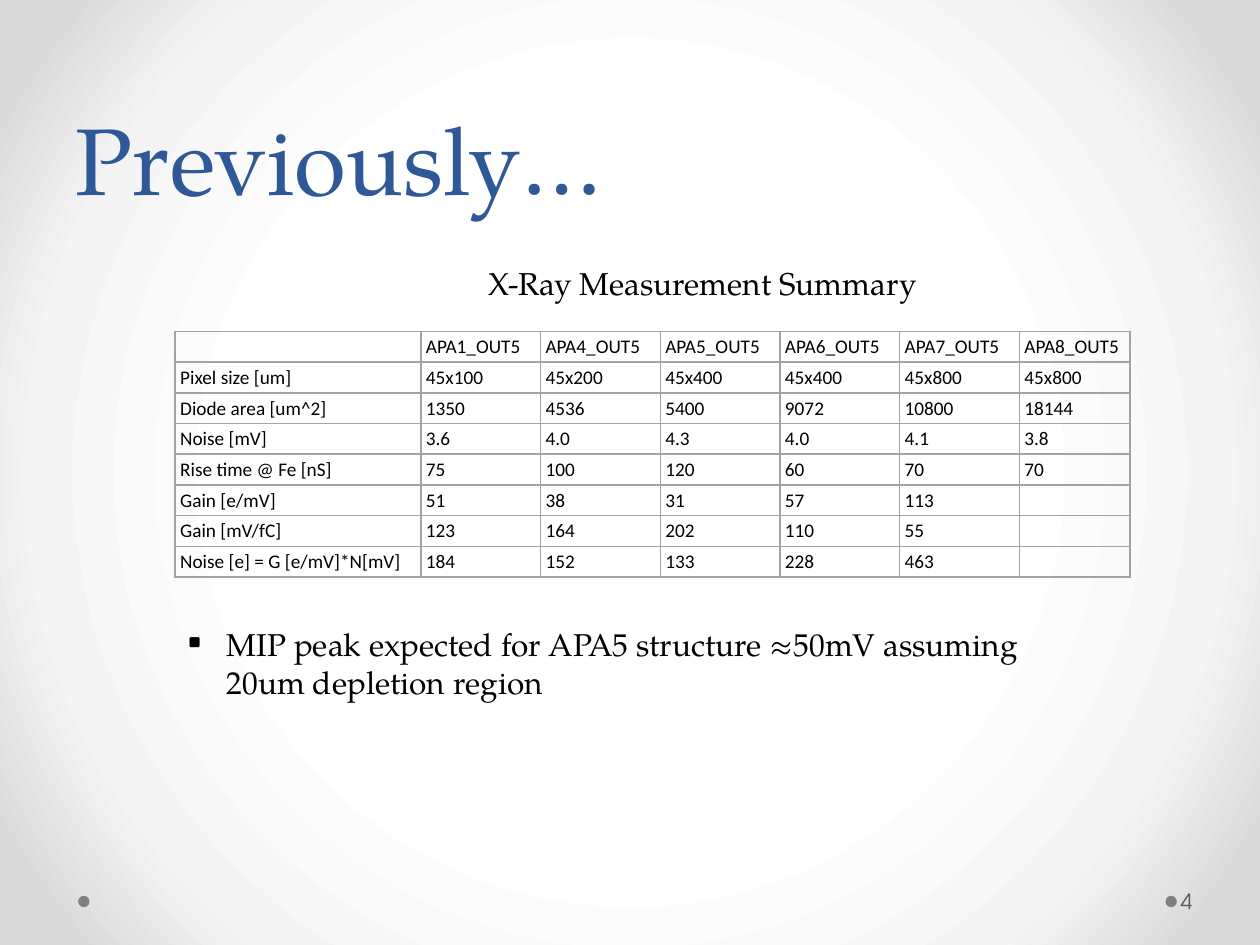
"""Build the X-ray measurement summary slide."""
from dataclasses import dataclass
from typing import Optional

from lxml.etree import SubElement
from pptx import Presentation
from pptx.dml.color import RGBColor
from pptx.enum.shapes import MSO_SHAPE
from pptx.enum.text import MSO_ANCHOR, MSO_AUTO_SIZE, PP_ALIGN
from pptx.oxml import parse_xml
from pptx.oxml.ns import nsdecls, qn
from pptx.util import Inches, Pt


@dataclass(frozen=True)
class Theme:
    """Colours, fonts and type sizes of the slide."""

    title: str = "2F5897"
    text: str = "000000"
    number: str = "595959"
    dot: str = "808080"
    border: str = "A3A3A3"
    background: tuple = ((50, "FFFFFF"), (76, "F4F4F4"), (92, "DADADA"))
    serif: str = "TeX Gyre Pagella"
    sans: str = "TeX Gyre Adventor"
    table_font: str = "Calibri"
    title_size: int = 54
    body_size: int = 18
    number_size: int = 12
    table_size: int = 11


@dataclass(frozen=True)
class Box:
    """A rectangle measured in inches."""

    left: float
    top: float
    width: float
    height: float

    def lengths(self) -> tuple:
        """Return the four measures as lengths."""
        return tuple(Inches(v) for v in (self.left, self.top, self.width, self.height))


THEME = Theme()
DOTS = [Box(left, 7.11, 0.09, 0.09) for left in (9.25, 0.62)]
TABLE_BOX = Box(1.39, 2.63, 7.58, 1.92)
COLUMN_WIDTHS = [1.95] + [0.95] * 5 + [0.88]
MEASUREMENTS = [
    ["", "APA1_OUT5", "APA4_OUT5", "APA5_OUT5", "APA6_OUT5", "APA7_OUT5", "APA8_OUT5"],
    ["Pixel size [um]", "45x100", "45x200", "45x400", "45x400", "45x800", "45x800"],
    ["Diode area [um^2]", "1350", "4536", "5400", "9072", "10800", "18144"],
    ["Noise [mV]", "3.6", "4.0", "4.3", "4.0", "4.1", "3.8"],
    ["Rise time @ Fe [nS]", "75", "100", "120", "60", "70", "70"],
    ["Gain [e/mV]", "51", "38", "31", "57", "113", ""],
    ["Gain [mV/fC]", "123", "164", "202", "110", "55", ""],
    ["Noise [e] = G [e/mV]*N[mV]", "184", "152", "133", "228", "463", ""],
]


def write_text(text_frame, text: str, *, size: int, font: str, color: str = THEME.text,
               anchor=MSO_ANCHOR.TOP, wrap: bool = True, auto_size=MSO_AUTO_SIZE.NONE,
               line_spacing: Optional[int] = None, bullet: Optional[str] = None) -> None:
    """Write one left-aligned paragraph with the given format."""
    text_frame.word_wrap = wrap
    text_frame.auto_size = auto_size
    text_frame.vertical_anchor = anchor
    paragraph = text_frame.paragraphs[0]
    paragraph.alignment = PP_ALIGN.LEFT
    paragraph.space_before = Pt(0)
    if line_spacing:
        paragraph.line_spacing = Pt(line_spacing)
    if bullet:
        properties = paragraph._p.get_or_add_pPr()
        properties.set("marL", str(Inches(0.31)))
        properties.set("indent", str(-Inches(0.31)))
        SubElement(properties, qn("a:buFont"), typeface=font)
        SubElement(properties, qn("a:buChar"), char=bullet)
    run = paragraph.add_run()
    run.text = text
    run.font.size = Pt(size)
    run.font.name = font
    run.font.color.rgb = RGBColor.from_string(color)


def paint_background(slide) -> None:
    """Give the slide a circular gradient."""
    stops = "".join(f'<a:gs pos="{position * 1000}"><a:srgbClr val="{color}"/></a:gs>'
                    for position, color in THEME.background)
    background = parse_xml(
        f'<p:bg {nsdecls("p", "a")}><p:bgPr><a:gradFill rotWithShape="1">'
        f'<a:gsLst>{stops}</a:gsLst><a:path path="circle">'
        '<a:fillToRect l="50000" t="50000" r="50000" b="50000"/></a:path>'
        '</a:gradFill><a:effectLst/></p:bgPr></p:bg>')
    slide.element.cSld.insert(0, background)


def add_dot(slide, box: Box) -> None:
    """Draw one footer dot."""
    dot = slide.shapes.add_shape(MSO_SHAPE.OVAL, *box.lengths())
    dot.shadow.inherit = False
    dot.fill.solid()
    dot.fill.fore_color.rgb = RGBColor.from_string(THEME.dot)
    dot.line.fill.background()


def place(shape, box: Box) -> None:
    """Move and size a placeholder."""
    shape.left, shape.top, shape.width, shape.height = box.lengths()


def format_cell(cell, text: str) -> None:
    """Set the text, margins, fill and borders of a table cell."""
    cell.margin_left = cell.margin_right = Inches(0.04)
    cell.margin_top = cell.margin_bottom = Inches(0.03)
    if text:
        write_text(cell.text_frame, text, size=THEME.table_size, font=THEME.table_font)
    else:
        SubElement(cell.text_frame.paragraphs[0]._p, qn("a:endParaRPr"),
                   sz=str(THEME.table_size * 100))
    cell.fill.background()
    properties = cell._tc.get_or_add_tcPr()
    for index, side in enumerate(("lnL", "lnR", "lnT", "lnB")):
        properties.insert(index, parse_xml(
            f'<a:{side} {nsdecls("a")} w="{Pt(1)}"><a:solidFill>'
            f'<a:srgbClr val="{THEME.border}"/></a:solidFill></a:{side}>'))


def add_measurements(slide) -> None:
    """Add the table of measurements."""
    frame = slide.shapes.add_table(len(MEASUREMENTS), len(COLUMN_WIDTHS), *TABLE_BOX.lengths())
    table = frame.table
    table.first_row = table.horz_banding = False
    for column, width in zip(table.columns, COLUMN_WIDTHS):
        column.width = Inches(width)
    for row, values in zip(table.rows, MEASUREMENTS):
        for cell, value in zip(row.cells, values):
            format_cell(cell, value)


def main() -> None:
    """Build and save the presentation."""
    presentation = Presentation()
    presentation.slide_width, presentation.slide_height = Inches(10), Inches(7.5)
    slide = presentation.slides.add_slide(presentation.slide_layouts[1])
    paint_background(slide)
    for box in DOTS:
        add_dot(slide, box)

    title = slide.shapes.title
    place(title, Box(0.5, 0, 9, 1.75))
    write_text(title.text_frame, "Previously…", size=THEME.title_size, font=THEME.serif,
               color=THEME.title, anchor=MSO_ANCHOR.BOTTOM, line_spacing=58)

    number = slide.shapes.add_textbox(*Box(9.34, 6.95, 0.61, 0.4).lengths())
    number.text_frame.margin_left = Inches(0.03)
    number.text_frame.margin_right = Inches(0.05)
    write_text(number.text_frame, "4", size=THEME.number_size, font=THEME.sans,
               color=THEME.number, anchor=MSO_ANCHOR.MIDDLE)

    add_measurements(slide)

    caption = slide.shapes.add_textbox(*Box(3.78, 2.05, 3.65, 0.4).lengths())
    write_text(caption.text_frame, "X-Ray Measurement Summary", size=THEME.body_size,
               font=THEME.serif, wrap=False, auto_size=MSO_AUTO_SIZE.SHAPE_TO_FIT_TEXT)

    body = slide.placeholders[1]
    place(body, Box(1.39, 4.91, 7.11, 0.71))
    write_text(body.text_frame,
               "MIP peak expected for APA5 structure ≈50mV assuming 20um depletion region",
               size=THEME.body_size, font=THEME.serif, bullet="▪",
               auto_size=MSO_AUTO_SIZE.SHAPE_TO_FIT_TEXT)
    presentation.save("out.pptx")


if __name__ == "__main__":
    main()
